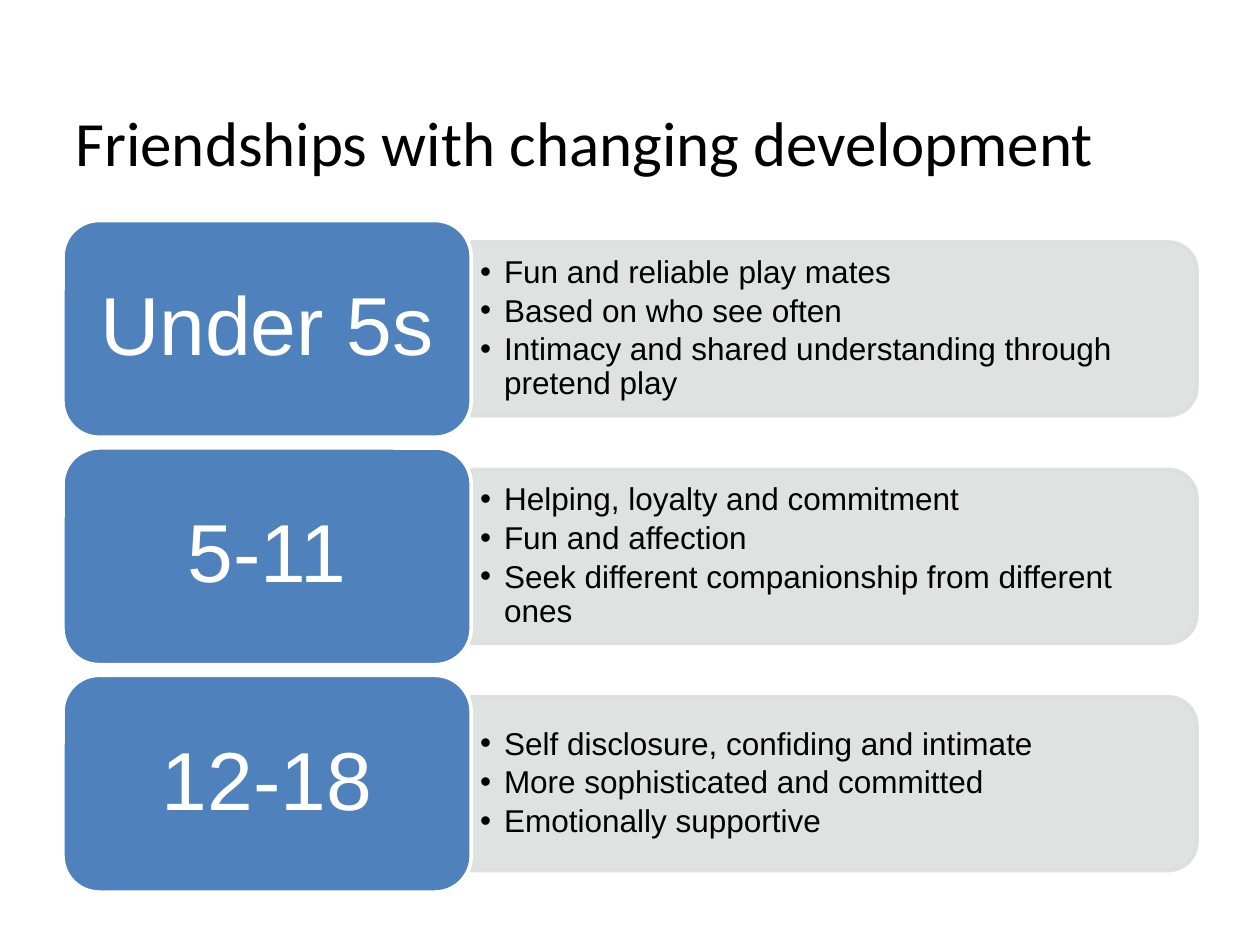
"""Build the slide on how friendships change with development."""
from lxml import etree
from pptx import Presentation
from pptx.dml.color import RGBColor
from pptx.enum.shapes import MSO_SHAPE
from pptx.enum.text import MSO_ANCHOR, PP_ALIGN
from pptx.oxml.ns import qn
from pptx.util import Inches, Pt

ROUNDED = MSO_SHAPE.ROUNDED_RECTANGLE
ROUNDED_TOP = MSO_SHAPE.ROUND_2_SAME_RECTANGLE
MIDDLE = MSO_ANCHOR.MIDDLE
LEFT, CENTER = PP_ALIGN.LEFT, PP_ALIGN.CENTER

STAGES = [
    ("Under 5s", ["Fun and reliable play mates", "Based on who see often",
                  "Intimacy and shared understanding through pretend play"]),
    ("5-11", ["Helping, loyalty and commitment", "Fun and affection",
              "Seek different companionship from different ones"]),
    ("12-18", ["Self disclosure, confiding and intimate",
               "More sophisticated and committed", "Emotionally supportive"]),
]
TITLE = {"font": "Calibri", "size": 36, "color": "000000", "align": LEFT,
         "inset": (0.1, 0.05), "spacing": 1.0, "before": 0, "bullet": False}
LABEL = {"font": "Arial", "size": 47, "color": "FFFFFF", "align": CENTER,
         "inset": (0.2, 0.1), "spacing": 0.9, "before": 0, "bullet": False}
POINTS = {"font": "Arial", "size": 18, "color": "000000", "align": LEFT,
          "inset": (0.07, 0.04), "spacing": 0.9, "before": 2.7, "bullet": True}

MARGIN, TOP = 0.5, 1.75
LABEL_WIDTH, LABEL_HEIGHT = 3.24, 1.72
PANEL_WIDTH, PANEL_HEIGHT = 5.76, 1.38
PITCH = 1.805
PANEL_LEFT = MARGIN + LABEL_WIDTH

prs = Presentation()
prs.slide_width, prs.slide_height = Inches(10), Inches(7.5)
slide = prs.slides.add_slide(prs.slide_layouts[6])


def write(left, top, width, height, lines, style):
    """Add a text box holding one paragraph per line."""
    frame = slide.shapes.add_textbox(*map(Inches, (left, top, width, height))).text_frame
    across, down = map(Inches, style["inset"])
    settings = {"word_wrap": True, "vertical_anchor": MIDDLE,
                "margin_left": across, "margin_right": across,
                "margin_top": down, "margin_bottom": down}
    for key, value in settings.items():
        setattr(frame, key, value)
    for index, line in enumerate(lines):
        paragraph = frame.add_paragraph() if index else frame.paragraphs[0]
        paragraph.alignment = style["align"]
        paragraph.line_spacing = style["spacing"]
        paragraph.space_before = Pt(style["before"] if index else 0)
        if style["bullet"]:
            paragraph.level = 1
            properties = paragraph._p.get_or_add_pPr()
            properties.set("marL", str(Inches(0.19)))
            properties.set("indent", str(Inches(-0.19)))
            etree.SubElement(properties, qn("a:buFont"), typeface="Arial")
            etree.SubElement(properties, qn("a:buChar"), char="•")
        run = paragraph.add_run()
        run.text = line
        run.font.name, run.font.size = style["font"], Pt(style["size"])
        run.font.color.rgb = RGBColor.from_string(style["color"])


def block(kind, left, top, width, height, corners, fill, line, alpha=100):
    """Add a filled and outlined shape with the given corner adjustments."""
    shape = slide.shapes.add_shape(kind, *map(Inches, (left, top, width, height)))
    shape.shadow.inherit = False
    for index, corner in enumerate(corners):
        shape.adjustments[index] = corner
    shape.fill.solid()
    shape.line.width = Pt(2.08)
    for paint, color in ((shape.fill.fore_color, fill), (shape.line.color, line)):
        paint.rgb = RGBColor.from_string(color)
    if alpha < 100:
        for swatch in shape._element.spPr.iter(qn("a:srgbClr")):
            etree.SubElement(swatch, qn("a:alpha"), val=str(alpha * 1000))
    return shape


write(MARGIN, 0.58, 9, 1.08, ["Friendships with changing development"], TITLE)

for row, (age, traits) in enumerate(STAGES):
    top = TOP + row * PITCH
    middle = top + LABEL_HEIGHT / 2
    panel = block(ROUNDED_TOP, PANEL_LEFT + (PANEL_WIDTH - PANEL_HEIGHT) / 2,
                  middle - PANEL_WIDTH / 2, PANEL_HEIGHT, PANEL_WIDTH,
                  (0.167, 0), "DBDFDD", "DBDFDD", 90)
    panel.rotation = 90
    write(PANEL_LEFT, middle - 0.62, PANEL_WIDTH - 0.07, 1.24, traits, POINTS)
    block(ROUNDED, MARGIN, top, LABEL_WIDTH, LABEL_HEIGHT, (0.167,), "4F81BD", "FFFFFF")
    write(MARGIN + 0.08, top + 0.08, LABEL_WIDTH - 0.16, LABEL_HEIGHT - 0.16, [age], LABEL)

prs.save("out.pptx")
